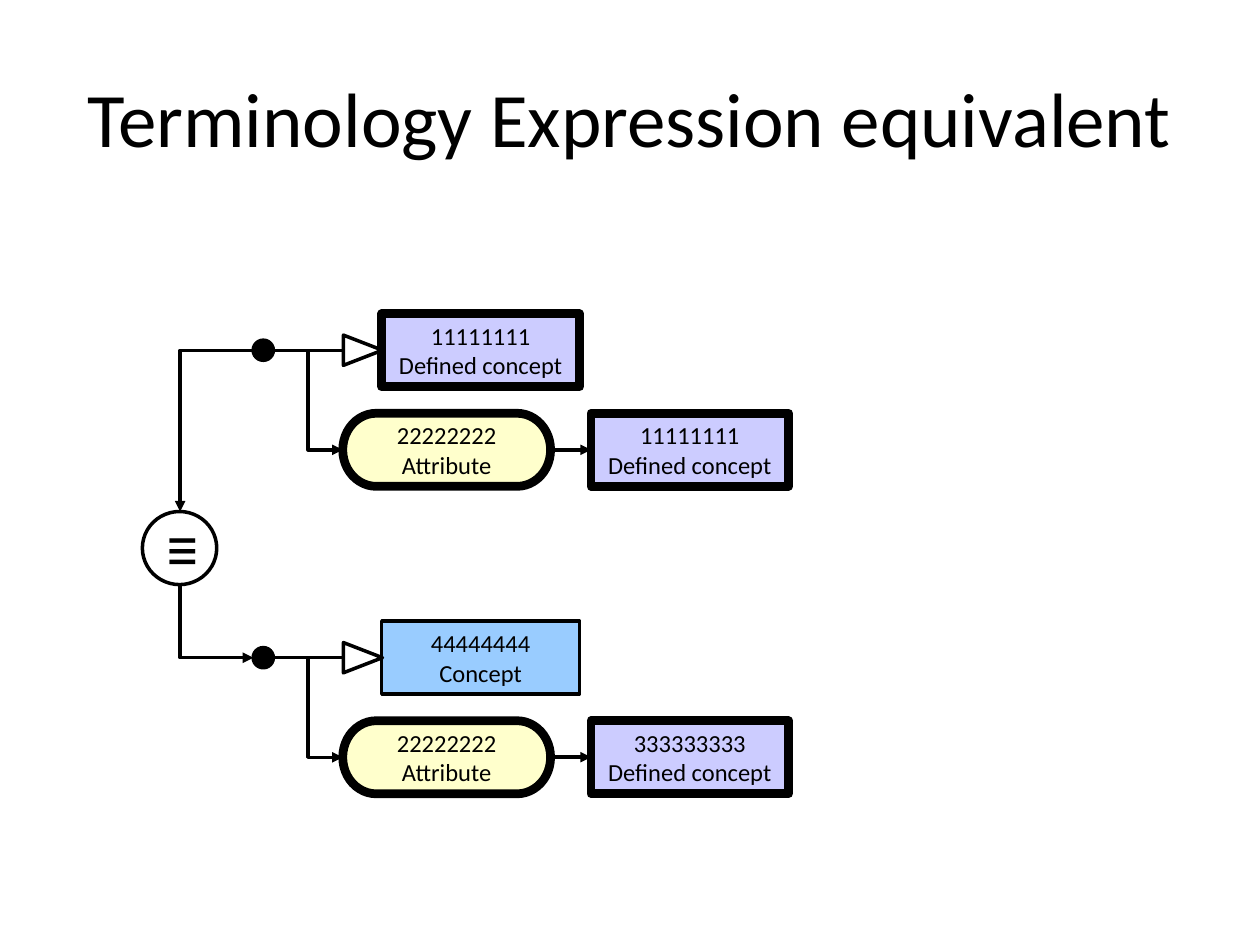
from dataclasses import dataclass

from lxml import etree
from pptx import Presentation
from pptx import util as u
from pptx.dml.color import RGBColor
from pptx.enum import shapes, text
from pptx.oxml.ns import qn


@dataclass(frozen=True)
class Theme:
    font: str = "Calibri"
    symbol_font: str = "Noto Sans Mono"
    ink: str = "000000"
    white: str = "FFFFFF"
    attribute: str = "FFFFCC"
    defined: str = "CCCCFF"
    primitive: str = "99CCFF"
    title_size: int = 44
    label_size: int = 14
    symbol_size: int = 32
    thin: int = 2
    thick: int = 5


THEME = Theme()
KIND = shapes.MSO_SHAPE
BOX_HEIGHT = 0.58
CONCEPT_WIDTH = 1.57
DOT_SIZE = 0.16
DOT_LEFT, DOT_RIGHT = 2.01, 2.17
ATTRIBUTE_LEFT = 2.72
PARENT_LEFT = 3.03
VALUE_LEFT = 4.69
ROW_GAP = 0.79
TOP_Y, BOTTOM_Y = 2.78, 5.22


def color(value):
    return RGBColor.from_string(value)


def add_text(shape, lines, size, font=THEME.font):
    frame = shape.text_frame
    frame.word_wrap = True
    frame.vertical_anchor = text.MSO_ANCHOR.MIDDLE
    for index, line in enumerate(lines):
        para = frame.add_paragraph() if index else frame.paragraphs[0]
        para.alignment = text.PP_ALIGN.CENTER
        span = para.add_run()
        span.text = line
        span.font.name = font
        span.font.size = u.Pt(size)
        span.font.color.rgb = color(THEME.ink)


def add_title(page, title):
    box = page.shapes.add_textbox(
        u.Inches(0.5), u.Inches(0.3), u.Inches(9), u.Inches(1.25))
    add_text(box, [title], THEME.title_size)


def add_node(page, kind, left, middle, width, height, fill=None, line=THEME.thin):
    """Place an outlined shape centred vertically on middle."""
    node = page.shapes.add_shape(
        kind, u.Inches(left), u.Inches(middle - height / 2),
        u.Inches(width), u.Inches(height))
    node.shadow.inherit = False
    if fill:
        node.fill.solid()
        node.fill.fore_color.rgb = color(fill)
    else:
        node.fill.background()
    node.line.color.rgb = color(THEME.ink)
    node.line.width = u.Pt(line)
    return node


def add_concept(page, left, middle, lines, fill=THEME.defined, line=THEME.thick):
    box = add_node(page, KIND.RECTANGLE, left, middle,
                   CONCEPT_WIDTH, BOX_HEIGHT, fill, line)
    add_text(box, lines, THEME.label_size)
    return box


def add_link(page, start, end, kind=shapes.MSO_CONNECTOR.ELBOW, arrow=True):
    link = page.shapes.add_connector(kind, *(u.Inches(n) for n in start + end))
    link.line.color.rgb = color(THEME.ink)
    link.line.width = u.Pt(THEME.thin)
    if arrow:
        outline = link.line._get_or_add_ln()
        etree.SubElement(outline, qn("a:tailEnd"), type="triangle")
    etree.SubElement(link._element.spPr, qn("a:effectLst"))
    return link


def add_corner(page, start, end, rotation=0):
    """Add an elbow with one bend; rotation is in degrees."""
    properties = add_link(page, start, end)._element.spPr
    properties.find(qn("a:prstGeom")).set("prst", "bentConnector2")
    if rotation:
        properties.find(qn("a:xfrm")).set("rot", str(rotation * 60000))


def add_expression(page, y, parent, value, fill, line):
    """Draw a dot with its parent concept and its attribute-value pair."""
    row = y + ROW_GAP

    # Parent concept and the hollow "is a" arrow
    add_link(page, (DOT_RIGHT, y), (ATTRIBUTE_LEFT, y),
             shapes.MSO_CONNECTOR.STRAIGHT, arrow=False)
    add_concept(page, PARENT_LEFT, y, parent, fill, line)
    head = add_node(page, KIND.ISOSCELES_TRIANGLE, 2.76, y, 0.24, 0.31)
    head.rotation = 90

    # Attribute and its value
    attribute = add_node(page, KIND.FLOWCHART_TERMINATOR, ATTRIBUTE_LEFT, row,
                         1.65, BOX_HEIGHT, THEME.attribute, THEME.thick)
    add_text(attribute, ["22222222", "Attribute"], THEME.label_size)
    target = add_concept(page, VALUE_LEFT, row, value)
    add_link(page, (DOT_RIGHT, y), (ATTRIBUTE_LEFT, row))
    pair = add_link(page, (4.37, row), (VALUE_LEFT, row))
    pair.begin_connect(attribute, 3)
    pair.end_connect(target, 1)

    add_node(page, KIND.OVAL, DOT_LEFT, y, DOT_SIZE, DOT_SIZE, THEME.ink)


def add_equivalence(page):
    """Draw the equivalence sign and its links to both expressions."""
    center, middle = 1.43, 4.35
    top, bottom = middle - BOX_HEIGHT / 2, middle + BOX_HEIGHT / 2
    sign = add_node(page, KIND.OVAL, 1.13, middle, 0.59, BOX_HEIGHT, THEME.white)
    add_text(sign, ["≡"], THEME.symbol_size, THEME.symbol_font)
    add_corner(page, (DOT_LEFT, TOP_Y), (center, top))
    # A quarter turn makes this one leave downwards and arrive from the left
    add_corner(page, (DOT_LEFT, bottom), (center, BOTTOM_Y), rotation=270)


def main():
    deck = Presentation()
    deck.slide_width, deck.slide_height = u.Inches(10), u.Inches(7.5)
    page = deck.slides.add_slide(deck.slide_layouts[6])

    add_title(page, "Terminology Expression equivalent")
    defined = ["11111111", "Defined concept"]
    add_expression(page, TOP_Y, defined, defined, THEME.defined, THEME.thick)
    add_expression(page, BOTTOM_Y, ["44444444", "Concept"],
                   ["333333333", "Defined concept"], THEME.primitive, THEME.thin)
    add_equivalence(page)

    deck.save("out.pptx")


if __name__ == "__main__":
    main()
